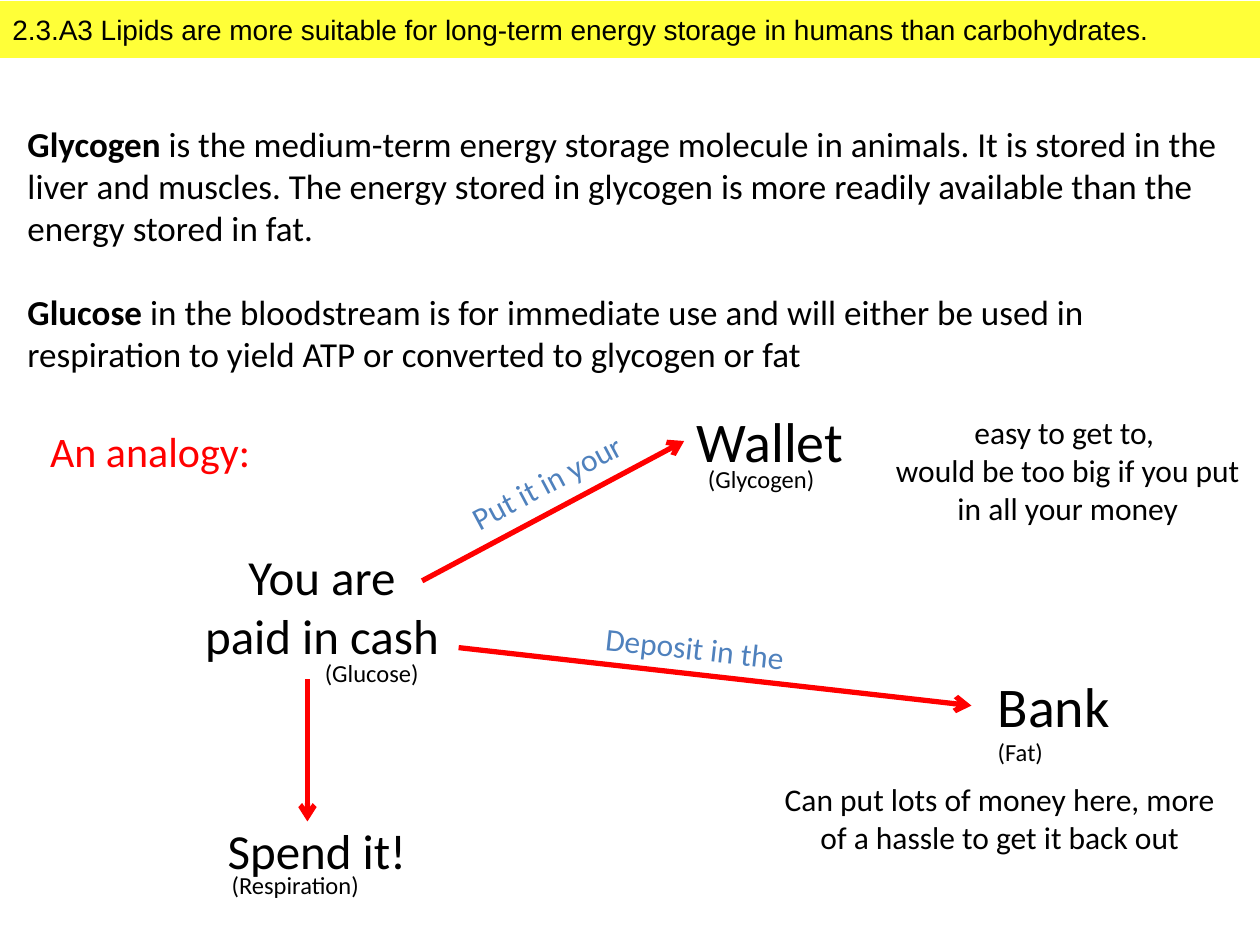
import pptx
import pptx.util
import pptx.dml.color
import pptx.enum.shapes
import pptx.enum.text
import pptx.oxml
import pptx.oxml.ns
from pptx.util import Inches, Pt

BLACK = pptx.dml.color.RGBColor(0x00, 0x00, 0x00)
RED = pptx.dml.color.RGBColor(0xFF, 0x00, 0x00)
BLUE = pptx.dml.color.RGBColor(0x4F, 0x81, 0xBD)
YELLOW = pptx.dml.color.RGBColor(0xFF, 0xFF, 0x00)
LEFT = pptx.enum.text.PP_ALIGN.LEFT
CENTER = pptx.enum.text.PP_ALIGN.CENTER


def style(paragraph, size, color=BLACK, align=LEFT, font_name="Calibri"):
    paragraph.alignment = align
    paragraph.font.name = font_name
    paragraph.font.size = Pt(size)
    paragraph.font.color.rgb = color


def add_text(box, lines, size, color=BLACK, align=LEFT, rotation=0):
    """Add a wrapping text box; box is left, top, width, height in inches."""
    text_box = slide.shapes.add_textbox(*map(Inches, box))
    text_box.rotation = rotation
    frame = text_box.text_frame
    frame.word_wrap = True
    frame.auto_size = pptx.enum.text.MSO_AUTO_SIZE.SHAPE_TO_FIT_TEXT
    frame.text = lines
    for paragraph in frame.paragraphs:
        style(paragraph, size, color, align)
    return frame


presentation = pptx.Presentation()
presentation.slide_width = Inches(10)
presentation.slide_height = Inches(7.5)
slide = presentation.slides.add_slide(presentation.slide_layouts[6])

# Explanation of the two molecules, each starting with its name in bold
explanation = add_text((0.12, 0.92, 9.67, 2.12), "\n", 20)
molecules = [
    ("Glycogen ", "is the medium-term energy storage molecule in animals. It is stored in the "
     "liver and muscles. The energy stored in glycogen is more readily available than the "
     "energy stored in fat."),
    ("Glucose ", "in the bloodstream is for immediate use and will either be used in "
     "respiration to yield ATP or converted to glycogen or fat"),
]
for paragraph, (molecule, description) in zip(explanation.paragraphs, molecules):
    name_run = paragraph.add_run()
    name_run.text = molecule
    name_run.font.bold = True
    paragraph.add_run().text = description
explanation.paragraphs[1].space_before = Pt(24)

# Money analogy
add_text((0.3, 3.33, 2.67, 0.81), "An analogy:", 24, RED)
add_text((1.48, 4.29, 2.15, 1.04), "You are\npaid in cash", 28, align=CENTER)
add_text((1.44, 6.46, 2.15, 0.57), "Spend it!", 28, align=CENTER)
for left, top, place in [(5.43, 3.18, "Wallet"), (7.82, 5.28, "Bank")]:
    add_text((left, top, 1.64, 0.64), place, 32)

arrows = [
    (3.35, 4.61, 5.43, 3.5),
    (3.64, 5.14, 7.71, 5.6),
    (2.44, 5.39, 2.44, 6.52),
]
for ends in arrows:
    arrow = slide.shapes.add_connector(
        pptx.enum.shapes.MSO_CONNECTOR.STRAIGHT, *map(Inches, ends))
    arrow.line.color.rgb = RED
    arrow.line.width = Pt(3)
    pptx.oxml.ns.qn("a:tailEnd")
    head = pptx.oxml.parse_xml(
        f'<a:tailEnd {pptx.oxml.ns.nsdecls("a")} type="arrow"/>')
    arrow.line._get_or_add_ln().append(head)
    arrow._element.spPr.append(
        pptx.oxml.parse_xml(f'<a:effectLst {pptx.oxml.ns.nsdecls("a")}/>'))

for left, top, rotation, action in [
    (4.44, 4.94, 6.3, "Deposit in the"),
    (3.26, 3.62, 331.9, "Put it in your"),
]:
    add_text((left, top, 2.15, 0.4), action, 18, BLUE, CENTER, rotation)

for left, top, meaning in [
    (5.52, 3.63, "(Glycogen)"),
    (7.82, 5.8, "(Fat)"),
    (2.48, 5.17, "(Glucose)"),
    (1.74, 6.86, "(Respiration)"),
]:
    add_text((left, top, 1.64, 0.34), meaning, 14)

add_text((6.95, 3.23, 3.05, 1.01),
         "easy to get to, \nwould be too big if you put in all your money", 18, align=CENTER)
add_text((6.08, 6.14, 3.71, 0.71),
         "Can put lots of money here, more of a hassle to get it back out", 18, align=CENTER)

# Title band
band = slide.shapes.add_shape(
    pptx.enum.shapes.MSO_SHAPE.RECTANGLE, Inches(0), Inches(0.01), Inches(10), Inches(0.45))
band.shadow.inherit = False
band.line.fill.background()
band.fill.solid()
band.fill.fore_color.rgb = YELLOW
band_color = band._element.spPr.find(".//" + pptx.oxml.ns.qn("a:srgbClr"))
band_color.append(pptx.oxml.parse_xml(
    f'<a:alpha {pptx.oxml.ns.nsdecls("a")} val="78000"/>'))
title = band.text_frame
title.word_wrap = True
title.vertical_anchor = pptx.enum.text.MSO_ANCHOR.MIDDLE
title.text = ("2.3.A3 Lipids are more suitable for long-term energy storage "
              "in humans than carbohydrates.")
style(title.paragraphs[0], 16, font_name="Arial")

presentation.save("out.pptx")
